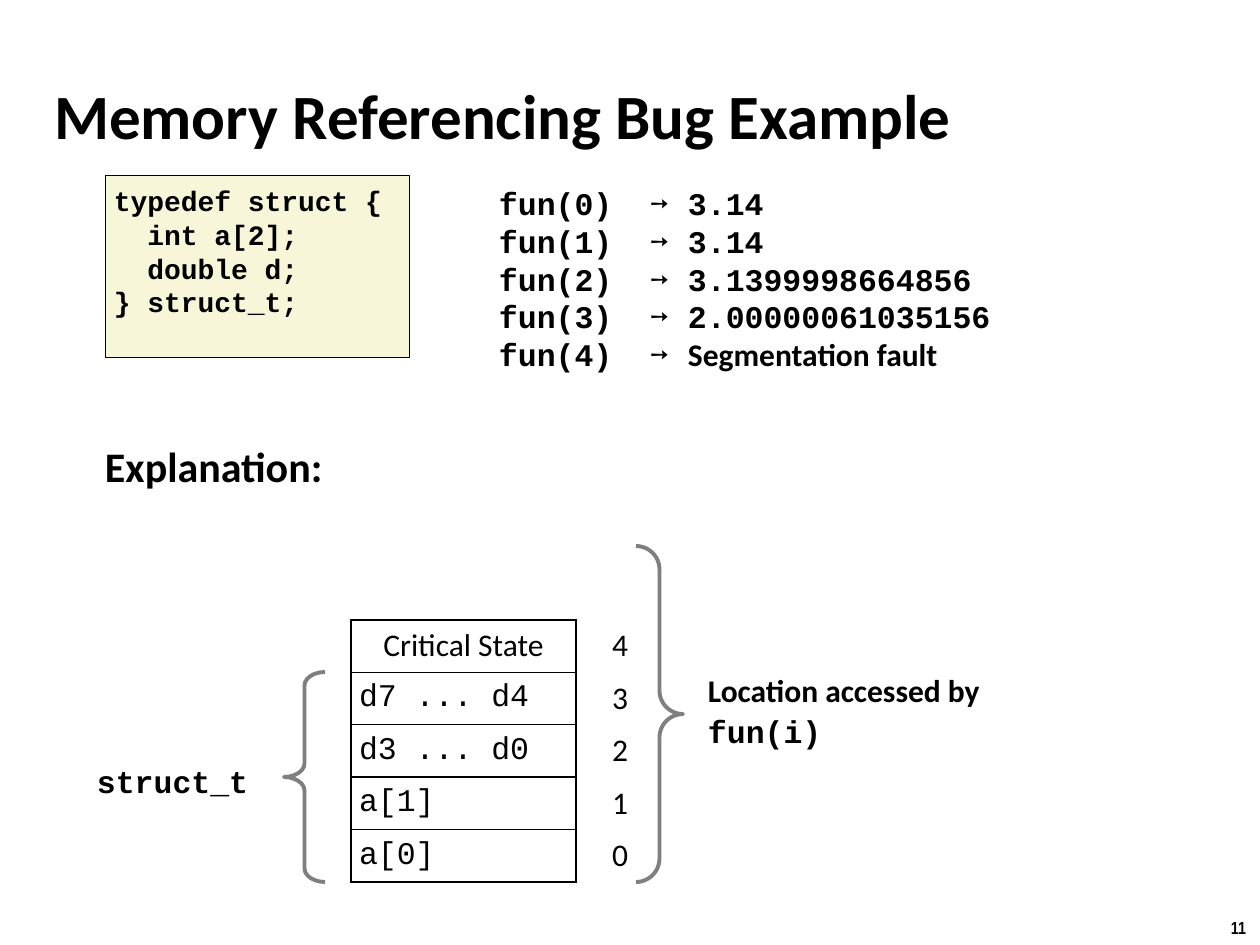
from lxml import etree
from pptx import Presentation
from pptx.dml.color import RGBColor
from pptx.enum.shapes import MSO_SHAPE
from pptx.enum.text import MSO_ANCHOR, PP_ALIGN
from pptx.oxml.ns import qn
from pptx.util import Emu, Pt

LEFT, MID, RIGHT = PP_ALIGN.LEFT, PP_ALIGN.CENTER, PP_ALIGN.RIGHT
TOP, CENTRE = MSO_ANCHOR.TOP, MSO_ANCHOR.MIDDLE
RECT = MSO_SHAPE.RECTANGLE
SANS, MONO, SMALL = "Calibri", "Courier New", "Arial Narrow"
BLACK, GRAY, CREAM, WHITE = "000000", "7F7F7F", "F8F6D9", "FFFFFF"

TITLE = "Memory Referencing Bug Example"
CODE = ["typedef struct {", "  int a[2];", "  double d;", "} struct_t;"]
CALLS = [
    ("3.14", MONO),
    ("3.14", MONO),
    ("3.1399998664856", MONO),
    ("2.00000061035156", MONO),
    ("Segmentation fault", SANS),
]
ROWS = [
    ("Critical State", SANS, MID),
    ("d7 ... d4", MONO, LEFT),
    ("d3 ... d0", MONO, LEFT),
    ("a[1]", MONO, LEFT),
    ("a[0]", MONO, LEFT),
]
BRACES = [
    (MSO_SHAPE.RIGHT_BRACE, (636, 546, 47, 336), 0.5),
    (MSO_SHAPE.LEFT_BRACE, (284, 672, 41, 210), 0.33),
]


def px(n):
    return Emu(round(n * 914400 / 126))


def rgb(code):
    return RGBColor.from_string(code)


def write(frame, lines, size=18, font=SANS, bold=True, align=LEFT,
          space=1.0):
    for i, line in enumerate(lines):
        para = frame.add_paragraph() if i else frame.paragraphs[0]
        para.alignment = align
        para.line_spacing = space
        for part in [line] if isinstance(line, str) else line:
            words, face = (part, font) if isinstance(part, str) else part
            run = para.add_run()
            run.text = words
            run.font.name = face
            run.font.size = Pt(size)
            run.font.bold = bold
            run.font.color.rgb = rgb(BLACK)


def inset(item, x, y):
    item.margin_left = item.margin_right = px(x)
    item.margin_top = item.margin_bottom = px(y)


def label(box, lines, pad=(5, 5), wrap=True, **form):
    frame = slide.shapes.add_textbox(*map(px, box)).text_frame
    frame.word_wrap = wrap
    inset(frame, *pad)
    write(frame, lines, **form)


def shape(kind, box, fill=None, line=None, width=0.5):
    item = slide.shapes.add_shape(kind, *map(px, box))
    item.shadow.inherit = False
    if fill:
        item.fill.solid()
        item.fill.fore_color.rgb = rgb(fill)
    else:
        item.fill.background()
    if line:
        item.line.color.rgb = rgb(line)
        item.line.width = Pt(width)
    else:
        item.line.fill.background()
    return item


def panel(box, lines, pad, fill, line=None, **form):
    frame = shape(RECT, box, fill, line).text_frame
    frame.word_wrap = True
    frame.vertical_anchor = TOP
    inset(frame, pad, pad)
    write(frame, lines, **form)


def border(cell, sides):
    props = cell._tc.get_or_add_tcPr()
    for side in "LRTB":
        edge = etree.SubElement(props, qn("a:ln" + side), w=str(Pt(1)))
        if side in sides:
            fill = etree.SubElement(edge, qn("a:solidFill"))
            etree.SubElement(fill, qn("a:srgbClr"), val=BLACK)
        else:
            etree.SubElement(edge, qn("a:noFill"))


def fill_cell(cell, words, font, align, sides):
    border(cell, sides)
    cell.fill.background()
    cell.vertical_anchor = CENTRE
    inset(cell, 8, 7)
    write(cell.text_frame, [words], font=font, align=align, bold=False)


def stack(left, top, widths, height):
    count = len(ROWS)
    table = slide.shapes.add_table(
        count, 2, px(left), px(top), px(sum(widths)), px(height)).table
    table.first_row = table.horz_banding = False
    for col, width in zip(table.columns, widths):
        col.width = px(width)
    for i, (words, font, align) in enumerate(ROWS):
        table.rows[i].height = px(height / count)
        fill_cell(table.cell(i, 0), words, font, align, "LRTB")
        fill_cell(table.cell(i, 1), str(count - 1 - i), SANS, RIGHT, "L")


deck = Presentation()
deck.slide_width, deck.slide_height = px(1260), px(945)
slide = deck.slides.add_slide(deck.slide_layouts[5])

title = slide.shapes.title
title.left, title.top, title.width, title.height = map(px, (49, 8, 1046, 213))
title.text_frame.vertical_anchor = CENTRE
inset(title.text_frame, 5, 5)
write(title.text_frame, [TITLE], size=36)

panel((105, 175, 305, 182), CODE, 9, CREAM, BLACK, size=16, font=MONO)
calls = [[f"fun({i})  ➙\t", call] for i, call in enumerate(CALLS)]
panel((494, 179, 609, 189), calls, 5, WHITE, font=MONO)

label((105, 441, 229, 62), ["Explanation:"], (0, 0), False, size=24)
label((703, 662, 292, 89),
      [["Location accessed by ", ("fun(i)", MONO)]], space=1.1)
label((84, 756, 178, 50), ["struct_t"], (13, 6), False, font=MONO)
label((1217, 911, 43, 34), ["11"], (13, 6), False,
      size=10, font=SMALL, align=MID)

stack(351, 620, (225, 60), 262)
for kind, box, bend in BRACES:
    brace = shape(kind, box, line=GRAY, width=2.25)
    brace.adjustments[0] = bend

deck.save("out.pptx")
